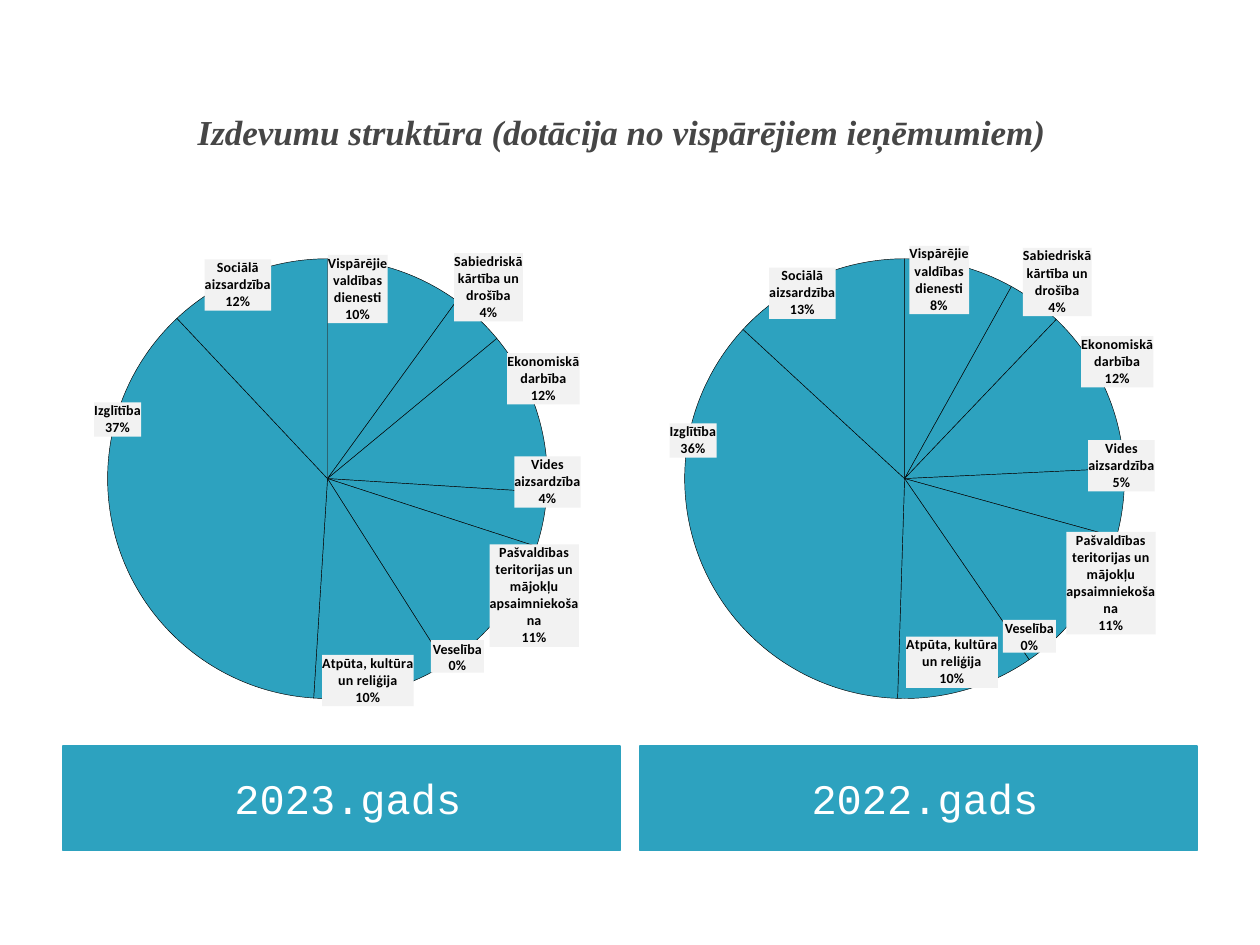
import copy

import lxml.etree
import pptx
import pptx.chart.data
import pptx.dml.color
import pptx.enum.chart
import pptx.enum.shapes
import pptx.enum.text
import pptx.oxml
import pptx.oxml.ns
import pptx.util

Inches = pptx.util.Inches
Pt = pptx.util.Pt
qn = pptx.oxml.ns.qn

TEAL = "2DA2BF"
LABEL_GREY = "F2F2F2"
COLUMN_WIDTH = 4.42
# Label lines of each expense category
CATEGORY_LINES = [
    ["Vispārējie", "valdības", "dienesti"],
    ["Sabiedriskā", "kārtība un", "drošība"],
    ["Ekonomiskā", "darbība"],
    ["Vides", "aizsardzība"],
    ["Pašvaldības", "teritorijas un", "mājokļu", "apsaimniekoša", "na"],
    ["Veselība"],
    ["Atpūta, kultūra", "un reliģija"],
    ["Izglītība"],
    ["Sociālā", "aizsardzība"],
]
CATEGORIES = [" ".join(lines).replace("ša na", "šana") for lines in CATEGORY_LINES]
# Per year: left edge, shares in percent, label shifts as fractions of the
# chart, and the corner of the label for the empty slice in inches
YEARS = {
    "2023.gads": (0.5, [10, 4, 12, 4, 11, 0, 10, 37, 12], [
        (-0.01, -0.04), (0.09, -0.13), (0.09, -0.11), (0.08, -0.02), (0.15, 0.07),
        None, (0.06, 0.04), (-0.06, -0.21), (-0.08, -0.04)], (3.42, 5.08)),
    "2022.gads": (5.08, [8, 4, 12, 5, 11, 0, 10, 36, 13], [
        (0.02, -0.05), (0.11, -0.11), (0.10, -0.10), (0.07, -0.02), (0.14, 0.06),
        None, (0.06, 0.01), (-0.07, -0.19), (-0.09, -0.03)], (7.96, 4.92)),
}


def rgb(value):
    return pptx.dml.color.RGBColor.from_string(value)


def style_font(font, name, size, color, bold=False, italic=False):
    font.name = name
    font.size = Pt(size)
    font.color.rgb = rgb(color)
    font.bold = bold
    font.italic = italic


def add_title(slide, text):
    title = slide.shapes.title
    title.left, title.top = Inches(0.5), Inches(0.3)
    title.width, title.height = Inches(9), Inches(1.25)
    title.text_frame.text = text
    title.text_frame.vertical_anchor = pptx.enum.text.MSO_ANCHOR.MIDDLE
    paragraph = title.text_frame.paragraphs[0]
    paragraph.alignment = pptx.enum.text.PP_ALIGN.CENTER
    style_font(paragraph.runs[0].font, "Times New Roman", 20, "464646", True, True)
    # The taller closing space sets the line height
    closing_space = paragraph.add_run()
    closing_space.text = " "
    closing_space.font.size = Pt(41)


def add_year_band(slide, left, text):
    band = slide.shapes.add_shape(
        pptx.enum.shapes.MSO_SHAPE.RECTANGLE,
        Inches(left), Inches(5.92), Inches(COLUMN_WIDTH), Inches(0.83))
    band.shadow.inherit = False
    band.fill.solid()
    band.fill.fore_color.rgb = rgb(TEAL)
    band.line.color.rgb = rgb(TEAL)
    band.line.width = Pt(0.75)
    frame = band.text_frame
    frame.text = text
    frame.margin_left = Inches(0.2)
    frame.vertical_anchor = pptx.enum.text.MSO_ANCHOR.MIDDLE
    frame.paragraphs[0].alignment = pptx.enum.text.PP_ALIGN.CENTER
    style_font(frame.paragraphs[0].runs[0].font, "Courier New", 24, "FFFFFF")


def chart_element(xml):
    return pptx.oxml.parse_xml(xml.replace(
        ">", f" {pptx.oxml.ns.nsdecls('c', 'a')}>", 1))


def manual_layout(x, y, size=None):
    target, extent = "", ""
    if size:
        target = ('<c:layoutTarget val="inner"/>'
                  '<c:xMode val="edge"/><c:yMode val="edge"/>')
        extent = f'<c:w val="{size[0]}"/><c:h val="{size[1]}"/>'
    return chart_element(
        f'<c:layout><c:manualLayout>{target}<c:x val="{x}"/><c:y val="{y}"/>'
        f'{extent}</c:manualLayout></c:layout>')


def label_text(lines):
    paragraphs = "".join(
        '<a:p><a:r><a:rPr lang="lv-LV" sz="800" b="1"><a:solidFill>'
        '<a:srgbClr val="000000"/></a:solidFill><a:latin typeface="Calibri"/>'
        f'</a:rPr><a:t>{line}</a:t></a:r></a:p>' for line in lines)
    return chart_element(f'<c:tx><c:rich><a:bodyPr/>{paragraphs}</c:rich></c:tx>')


def label_slices(series, shares, shifts):
    labels = series.data_labels
    labels.show_value = False
    labels.show_category_name = True
    labels.show_percentage = True
    labels.number_format = "0%"
    labels.number_format_is_linked = False
    labels.position = pptx.enum.chart.XL_LABEL_POSITION.INSIDE_END
    style_font(labels.font, "Calibri", 8, "000000", bold=True)

    # Grey label boxes
    group = series._element.find(qn("c:dLbls"))
    group.find(qn("c:txPr")).addprevious(chart_element(
        f'<c:spPr><a:solidFill><a:srgbClr val="{LABEL_GREY}"/></a:solidFill></c:spPr>'))
    for leader_setting in group.findall(qn("c:showLeaderLines")):
        group.remove(leader_setting)

    # Each label has its own place and lines, and shares the other settings
    shared = list(group)
    for index, (lines, share, shift) in enumerate(zip(CATEGORY_LINES, shares, shifts)):
        label = chart_element(f'<c:dLbl><c:idx val="{index}"/></c:dLbl>')
        if shift is None:
            label.append(chart_element('<c:delete val="1"></c:delete>'))
        else:
            label.append(manual_layout(*shift))
            label.append(label_text(lines + [f"{share}%"]))
            label.extend([copy.deepcopy(setting) for setting in shared])
        group.insert(index, label)
    group.append(chart_element('<c:showLeaderLines val="1"></c:showLeaderLines>'))


def add_expense_pie(slide, left, shares, shifts):
    expenses = pptx.chart.data.CategoryChartData(number_format="#,##0")
    expenses.categories = CATEGORIES
    expenses.add_series("Series 1", shares)
    chart = slide.shapes.add_chart(
        pptx.enum.chart.XL_CHART_TYPE.PIE, Inches(left), Inches(1.58),
        Inches(COLUMN_WIDTH), Inches(4.31), expenses).chart
    chart.has_title = False
    chart.has_legend = False
    style_font(chart.font, "Calibri", 10, "000000")

    pie = chart.plots[0]
    pie.vary_by_categories = False
    series = pie.series[0]
    for index in range(len(shares)):
        piece = series.points[index].format
        piece.fill.solid()
        piece.fill.fore_color.rgb = rgb(TEAL)
        piece.line.color.rgb = rgb("000000")
        piece.line.width = Pt(0.25)
    label_slices(series, shares, shifts)

    plot_area = chart._chartSpace.find(".//" + qn("c:plotArea"))
    for automatic in plot_area.findall(qn("c:layout")):
        plot_area.remove(automatic)
    plot_area.insert(0, manual_layout(0.08, 0.11, (0.79, 0.81)))


def add_empty_slice_label(slide, left, top):
    """Label the category whose share rounds to zero and has no slice."""
    label = slide.shapes.add_textbox(
        Inches(left), Inches(top), Inches(0.42), Inches(0.26))
    label.fill.solid()
    label.fill.fore_color.rgb = rgb(LABEL_GREY)
    frame = label.text_frame
    frame.margin_left = frame.margin_right = 0
    frame.margin_top = frame.margin_bottom = 0
    frame.word_wrap = False
    frame.text = "Veselība\n0%"
    for paragraph in frame.paragraphs:
        paragraph.alignment = pptx.enum.text.PP_ALIGN.CENTER
        style_font(paragraph.runs[0].font, "Calibri", 8, "000000", bold=True)


def main():
    deck = pptx.Presentation()
    deck.slide_width, deck.slide_height = Inches(10), Inches(7.5)
    slide = deck.slides.add_slide(deck.slide_layouts[5])
    add_title(slide, "Izdevumu struktūra (dotācija no vispārējiem ieņēmumiem)")
    for year, (left, shares, shifts, empty_corner) in YEARS.items():
        add_year_band(slide, left, year)
        add_expense_pie(slide, left, shares, shifts)
        add_empty_slice_label(slide, *empty_corner)
    deck.save("out.pptx")


if __name__ == "__main__":
    main()
